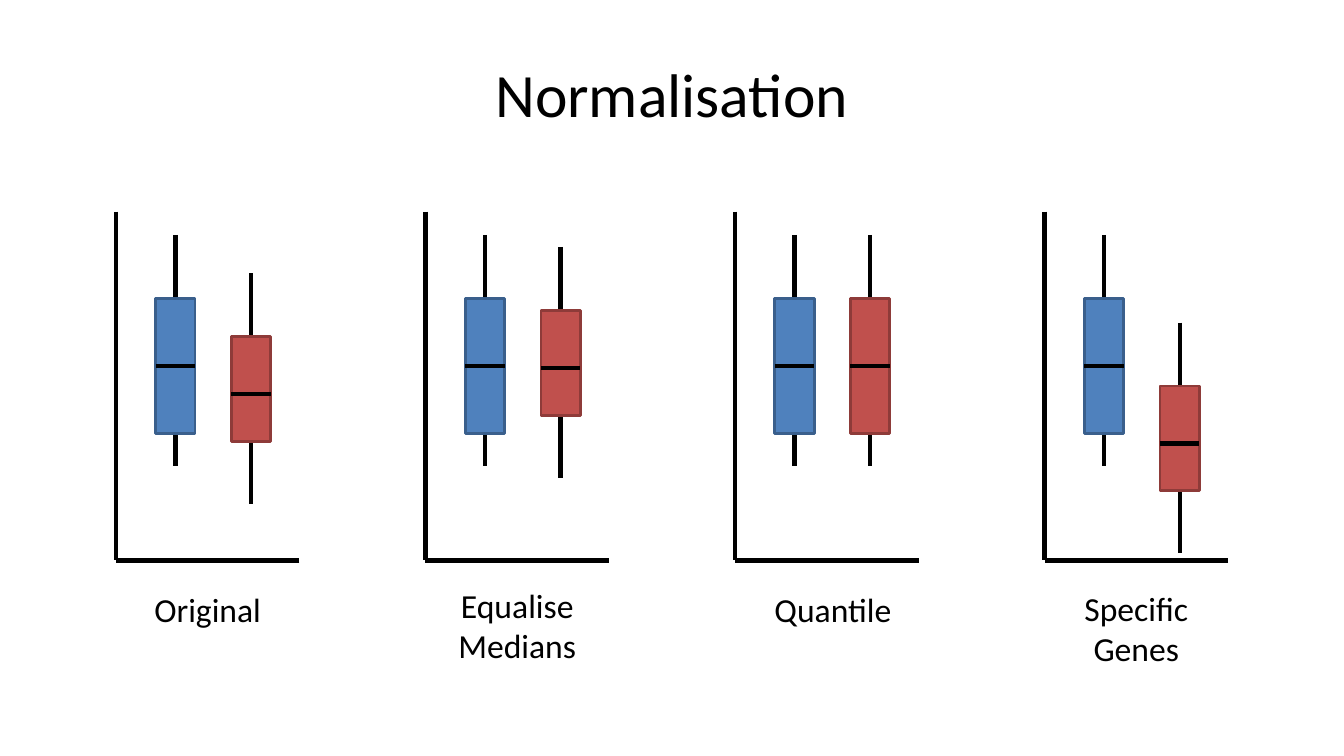
"""Draw four small box-plot panels that compare ways of normalising data."""

from dataclasses import dataclass

from lxml import etree
from pptx import Presentation
from pptx.dml.color import RGBColor
from pptx.enum.shapes import MSO_CONNECTOR, MSO_SHAPE
from pptx.enum.text import MSO_ANCHOR, MSO_AUTO_SIZE, PP_ALIGN
from pptx.oxml.ns import qn
from pptx.shapes.autoshape import Shape
from pptx.shapes.connector import Connector
from pptx.shapes.shapetree import GroupShapes
from pptx.util import Inches, Pt

STRAIGHT = MSO_CONNECTOR.STRAIGHT
RECTANGLE = MSO_SHAPE.RECTANGLE
MIDDLE = MSO_ANCHOR.MIDDLE
TOP = MSO_ANCHOR.TOP
CENTER = PP_ALIGN.CENTER
FIT_SHAPE = MSO_AUTO_SIZE.SHAPE_TO_FIT_TEXT
NO_FIT = MSO_AUTO_SIZE.NONE
LEFT_SIDE, RIGHT_SIDE = 1, 3

BLACK = RGBColor(0x00, 0x00, 0x00)
BLUE = RGBColor(0x4F, 0x81, 0xBD)
BLUE_EDGE = RGBColor(0x3A, 0x5F, 0x8C)
RED = RGBColor(0xC0, 0x50, 0x4D)
RED_EDGE = RGBColor(0x8E, 0x3B, 0x39)
FONT = "Calibri"

SLIDE_WIDTH, SLIDE_HEIGHT = 13.33, 7.5
FIRST_PANEL, PANEL_PITCH = 1.15, 3.07
AXIS_TOP, AXIS_BOTTOM, AXIS_WIDTH = 2.1, 5.56, 1.82
FIRST_BOX, BOX_PITCH, BOX_WIDTH = 0.59, 0.75, 0.39
WHISKER_LENGTH, UPPER_WHISKER = 2.29, 0.63
CAPTION_LINE, CAPTION_PADDING = 0.4, 0.1


@dataclass(frozen=True)
class Sample:
    fill: RGBColor
    edge: RGBColor
    whisker_top: float
    box_height: float
    median_drop: float


@dataclass(frozen=True)
class Panel:
    caption: tuple[str, ...]
    caption_centre: float
    caption_top: float
    caption_width: float
    treated: Sample


def narrow_sample(whisker_top: float) -> Sample:
    return Sample(RED, RED_EDGE, whisker_top, 1.04, 0.57)


REFERENCE = Sample(BLUE, BLUE_EDGE, 2.33, 1.34, 0.67)
MATCHED = Sample(RED, RED_EDGE, 2.33, 1.34, 0.67)

PANELS = (
    Panel(("Original",), 0.91, 5.79, 1.27, narrow_sample(2.71)),
    Panel(("Equalise", "Medians"), 0.91, 5.75, 1.38, narrow_sample(2.45)),
    Panel(("Quantile",), 0.97, 5.79, 1.38, MATCHED),
    Panel(("Specific", "Genes"), 0.91, 5.78, 1.24, narrow_sample(3.2)),
)


def add_line(shapes: GroupShapes, x1: float, y1: float, x2: float, y2: float) -> Connector:
    line = shapes.add_connector(STRAIGHT, Inches(x1), Inches(y1), Inches(x2), Inches(y2))
    line.line.color.rgb = BLACK
    line.line.width = Pt(3)
    etree.SubElement(line.element.spPr, qn("a:effectLst"))
    return line


def add_text(shapes: GroupShapes, lines: tuple[str, ...], left: float, top: float,
             width: float, height: float, size: int, wrap: bool) -> Shape:
    label = shapes.add_textbox(Inches(left), Inches(top), Inches(width), Inches(height))
    frame = label.text_frame
    frame.word_wrap = wrap
    frame.auto_size = NO_FIT if wrap else FIT_SHAPE
    frame.vertical_anchor = MIDDLE if wrap else TOP
    for index, words in enumerate(lines):
        paragraph = frame.add_paragraph() if index else frame.paragraphs[0]
        paragraph.alignment = CENTER
        run = paragraph.add_run()
        run.text = words
        run.font.name = FONT
        run.font.size = Pt(size)
        run.font.color.rgb = BLACK
    return label


def draw_sample(shapes: GroupShapes, sample: Sample, centre: float) -> None:
    add_line(shapes, centre, sample.whisker_top, centre, sample.whisker_top + WHISKER_LENGTH)
    left = centre - BOX_WIDTH / 2
    box_top = sample.whisker_top + UPPER_WHISKER
    box = shapes.add_shape(RECTANGLE, Inches(left), Inches(box_top),
                           Inches(BOX_WIDTH), Inches(sample.box_height))
    box.shadow.inherit = False
    box.fill.solid()
    box.fill.fore_color.rgb = sample.fill
    box.line.color.rgb = sample.edge
    box.line.width = Pt(2)
    median_y = box_top + sample.median_drop
    median = add_line(shapes, left, median_y, left + BOX_WIDTH, median_y)
    if abs(sample.median_drop - sample.box_height / 2) < 0.01:
        median.begin_connect(box, LEFT_SIDE)
        median.end_connect(box, RIGHT_SIDE)


def draw_panel(shapes: GroupShapes, panel: Panel, column: int) -> None:
    left = FIRST_PANEL + column * PANEL_PITCH
    add_line(shapes, left, AXIS_TOP, left, AXIS_BOTTOM)
    add_line(shapes, left + AXIS_WIDTH, AXIS_BOTTOM, left, AXIS_BOTTOM)
    for position, sample in enumerate((REFERENCE, panel.treated)):
        draw_sample(shapes, sample, left + FIRST_BOX + position * BOX_PITCH)
    caption_left = left + panel.caption_centre - panel.caption_width / 2
    caption_height = CAPTION_PADDING + CAPTION_LINE * len(panel.caption)
    add_text(shapes, panel.caption, caption_left, panel.caption_top,
             panel.caption_width, caption_height, 24, False)


def main() -> None:
    deck = Presentation()
    deck.slide_width = Inches(SLIDE_WIDTH)
    deck.slide_height = Inches(SLIDE_HEIGHT)
    slide = deck.slides.add_slide(deck.slide_layouts[6])
    add_text(slide.shapes, ("Normalisation",), SLIDE_WIDTH * 0.05, SLIDE_HEIGHT * 0.04,
             SLIDE_WIDTH * 0.9, SLIDE_HEIGHT / 6, 44, True)
    for column, panel in enumerate(PANELS):
        draw_panel(slide.shapes.add_group_shape().shapes, panel, column)
    deck.save("out.pptx")


if __name__ == "__main__":
    main()
